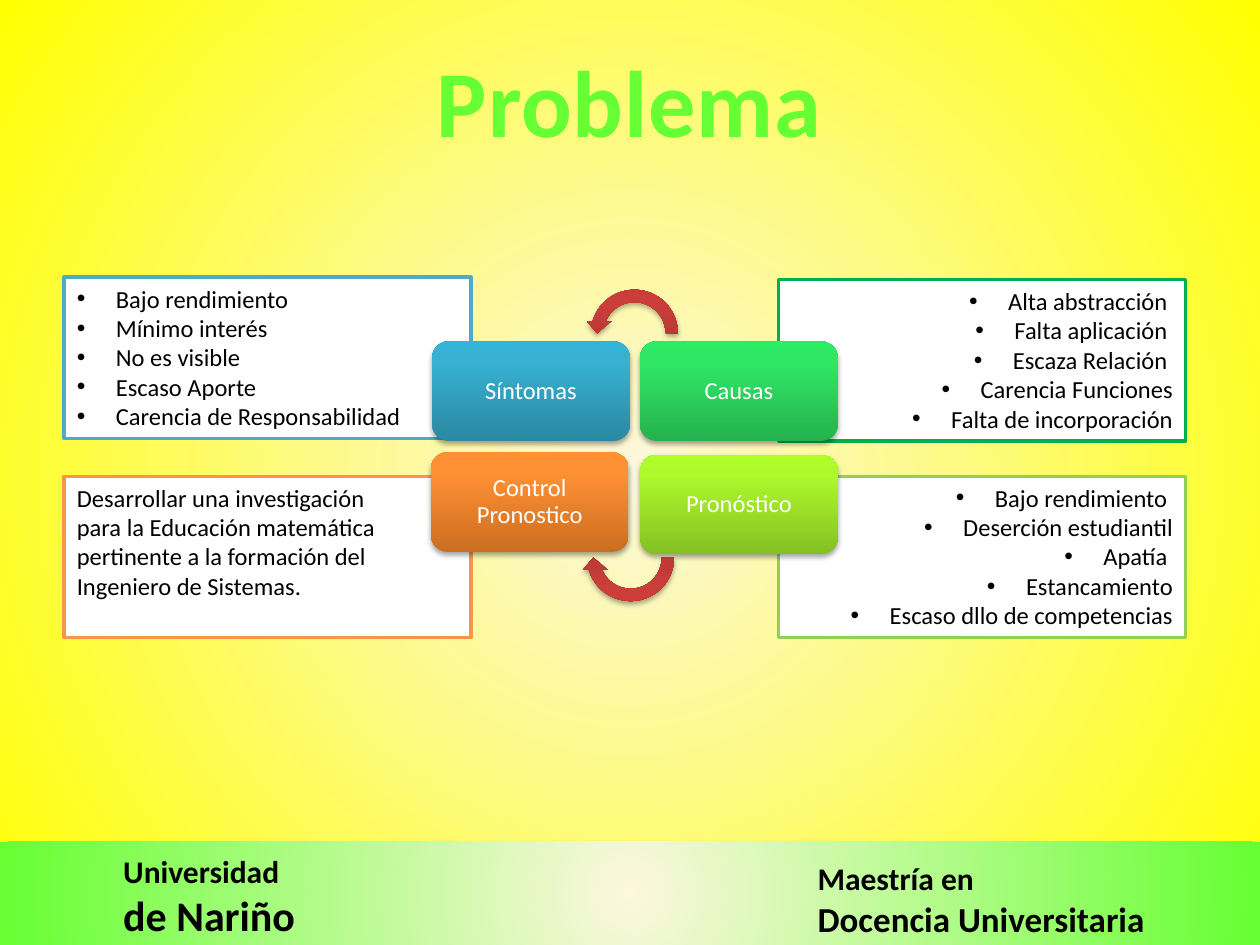
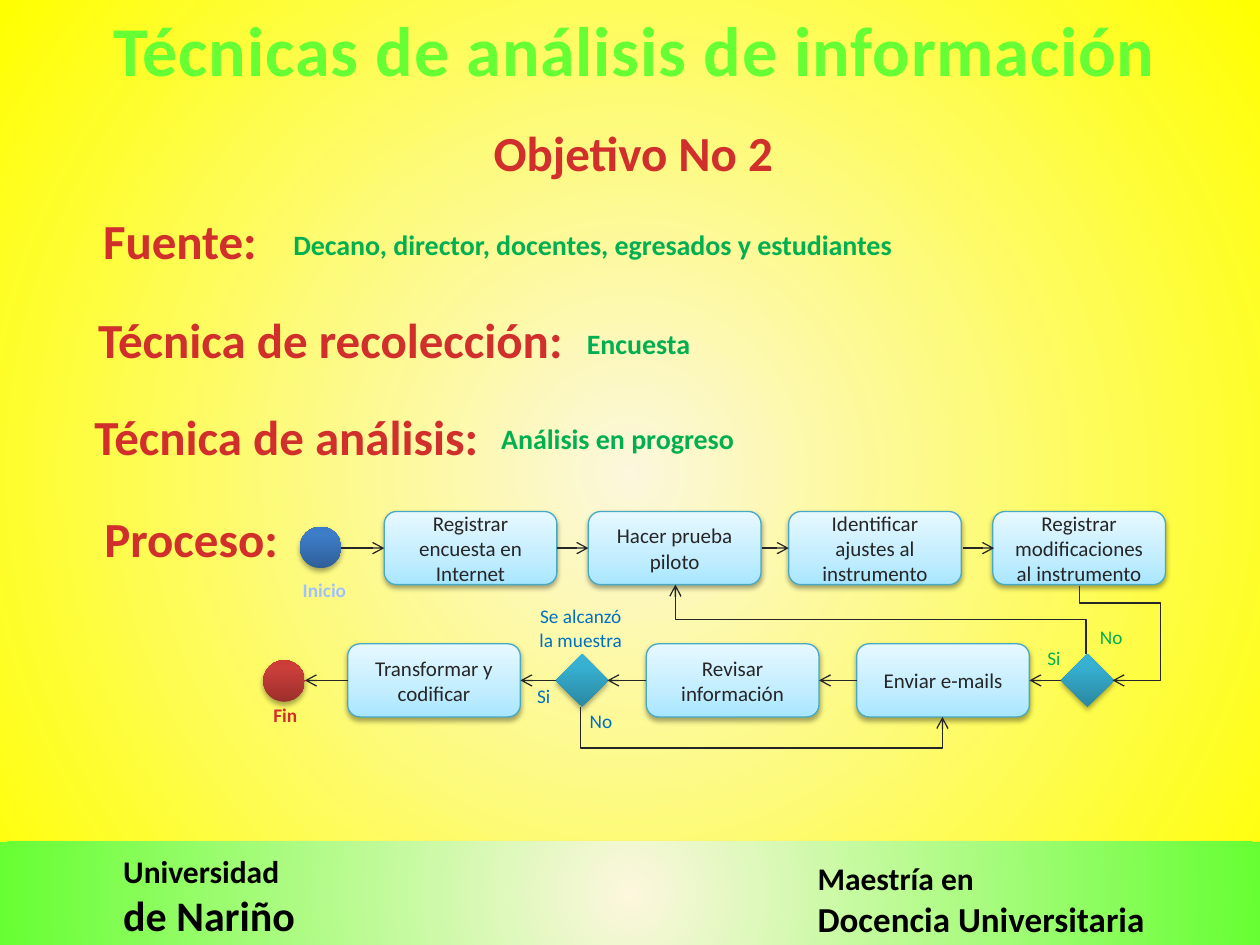
from dataclasses import dataclass
from itertools import cycle
from lxml.etree import SubElement
from pptx import Presentation
from pptx.dml.color import RGBColor
from pptx.enum.shapes import MSO_CONNECTOR, MSO_SHAPE
from pptx.enum.text import MSO_ANCHOR, MSO_AUTO_SIZE, PP_ALIGN
from pptx.oxml import parse_xml
from pptx.oxml.ns import nsdecls, qn
from pptx.util import Inches, Pt


@dataclass(frozen=True)
class Theme:
    font: str = "Calibri"
    black: str = "000000"
    white: str = "FFFFFF"
    ink: str = "262626"
    lime: str = "66FF33"
    green: str = "00B050"
    blue: str = "0070C0"
    edge: str = "46AAC5"
    page: tuple = ((0, "FCF7DD"), (100, "FFFF00"))
    band: tuple = ((0, "FCF7DD"), (100, "66FF33"))
    teal: tuple = ((0, "2A88A2"), (80, "37B1D2"), (100, "34B4D6"))
    leaf: tuple = ((0, "25B24E"), (80, "30E765"), (100, "2DEB64"))
    grass: tuple = ((0, "85C022"), (80, "ADF92C"), (100, "AFFE28"))
    orange: tuple = ((0, "CC6E20"), (80, "FF9034"), (100, "FF9136"))
    red: tuple = ((0, "9C2F2D"), (80, "CB3E3A"), (100, "CE3B37"))
    navy: tuple = ((0, "2F5F99"), (80, "3D7CC7"), (100, "3A7CCB"))
    ice: tuple = ((0, "A7E6FF"), (35, "C1EDFF"), (100, "E7F8FF"))
    ruby: tuple = ((0, "FC7C7A"), (75, "D02F2C"), (100, "C70500"))
    sky: tuple = ((0, "BFD3F9"), (9, "A0C1FF"), (50, "003D85"),
                  (79, "A0C1FF"), (100, "BFD3F9"))
    hero: int = 54
    head: int = 40
    label: int = 28
    value: int = 16
    body: int = 14
    step: int = 12
    tag: int = 11
    foot: tuple = (18, 24)
    course: tuple = (18, 20)


def style(item, values):
    for name, value in values.items():
        setattr(item, name, value)


def blend(root, stops, angle=None):
    marks = "".join(
        f'<a:gs pos="{spot * 1000}"><a:srgbClr val="{tone}"/></a:gs>'
        for spot, tone in stops)
    if angle is None:
        way = ('<a:path path="circle"><a:fillToRect l="50000" t="50000" '
               'r="50000" b="50000"/></a:path>')
    else:
        way = f'<a:lin ang="{angle * 60000}" scaled="0"/>'
    old = root.find(".//" + qn("a:solidFill"))
    old.getparent().replace(old, parse_xml(
        f'<a:gradFill {nsdecls("a")} rotWithShape="1">'
        f'<a:gsLst>{marks}</a:gsLst>{way}</a:gradFill>'))


class Pen:
    COLS, ROWS = 100, 75

    def __init__(self, theme):
        self.theme = theme
        self.deck = Presentation()
        style(self.deck, {"slide_width": Inches(10), "slide_height": Inches(7.5)})
        self.slide = None
        master = self.deck.slide_master
        self.tint(master.background.fill, master.element, theme.page)

    def grid(self, *spots):
        units = (self.deck.slide_width / self.COLS, self.deck.slide_height / self.ROWS)
        return [round(spot * unit) for spot, unit in zip(spots, cycle(units))]

    def tint(self, fill, root, paint, angle=None):
        fill.solid()
        if isinstance(paint, str):
            fill.fore_color.rgb = RGBColor.from_string(paint)
        else:
            blend(root, paint, angle)

    def place(self, shape, at):
        style(shape, dict(zip(("left", "top", "width", "height"), self.grid(*at))))

    def page(self, layout, title, size, at):
        self.slide = self.deck.slides.add_slide(self.deck.slide_layouts[layout])
        self.band()
        head = self.slide.shapes.title
        self.place(head, at)
        self.words(head.text_frame, [title], size, self.theme.lime, bold=True, wrap=False)
        for run in head.text_frame.paragraphs[0].runs:
            run._r.get_or_add_rPr().set("spc", "50")

    def band(self):
        look = self.theme
        self.shape("RECTANGLE", (0, 66.8, 100, 8.2), look.band, angle=None)
        self.text((8.8, 67.1, 18, 8.1), ["Universidad", "de Nariño"],
                  look.foot, look.black, bold=True, align="LEFT")
        self.text((63.9, 67.7, 29.1, 7.4), ["Maestría en", "Docencia Universitaria"],
                  look.course, look.black, bold=True, align="LEFT")

    def words(self, frame, lines, size, paint, bold=False, align="CENTER",
              wrap=True, anchor="TOP", spacing=1.0):
        style(frame, {"word_wrap": wrap, "auto_size": MSO_AUTO_SIZE.NONE,
                      "vertical_anchor": getattr(MSO_ANCHOR, anchor)})
        sizes = size if isinstance(size, tuple) else (size,)
        for index, (line, points) in enumerate(zip(lines, cycle(sizes))):
            para = frame.add_paragraph() if index else frame.paragraphs[0]
            style(para, {"alignment": getattr(PP_ALIGN, align), "space_before": Pt(0),
                         "line_spacing": spacing})
            run = para.add_run()
            run.text = line
            style(run.font, {"name": self.theme.font, "size": Pt(points), "bold": bold})
            self.tint(run.font.fill, run._r, paint, 90)

    def text(self, at, lines, size, paint, **form):
        box = self.slide.shapes.add_textbox(*self.grid(*at))
        self.words(box.text_frame, lines, size, paint, **form)

    def label(self, at, line, size, paint):
        self.text(at, [line], size, paint, bold=True, align="LEFT")

    def tag(self, at, lines, paint, bold=False):
        self.text(at, lines, self.theme.tag, paint, bold=bold, wrap=False)

    def note(self, holder, at, lines, edge, align="LEFT", mark=True):
        self.place(holder, at)
        self.tint(holder.fill, holder.element, self.theme.white)
        holder.line.color.rgb = RGBColor.from_string(edge)
        holder.line.width = Pt(2)
        self.words(holder.text_frame, lines, self.theme.body, self.theme.black, align=align)
        indent = Inches(0.31) if mark else 0
        for para in holder.text_frame.paragraphs:
            props = para._p.get_or_add_pPr()
            props.set("marL", str(indent))
            props.set("indent", str(-indent))
            if mark:
                SubElement(props, qn("a:buFont")).set("typeface", "Arial")
                SubElement(props, qn("a:buChar")).set("char", "•")
            else:
                SubElement(props, qn("a:buNone"))

    def shape(self, kind, at, paint, angle=270, edge=None):
        item = self.slide.shapes.add_shape(getattr(MSO_SHAPE, kind), *self.grid(*at))
        self.tint(item.fill, item.element, paint, angle)
        if edge:
            item.line.color.rgb = RGBColor.from_string(edge)
            item.line.width = Pt(0.75)
        else:
            item.line.fill.background()
        item.shadow.inherit = False
        item.element.spPr.find(qn("a:effectLst")).append(parse_xml(
            f'<a:outerShdw {nsdecls("a")} blurRad="{Pt(3.1)}" dist="{Pt(1.8)}" '
            'dir="5400000" rotWithShape="0"><a:srgbClr val="000000">'
            '<a:alpha val="35000"/></a:srgbClr></a:outerShdw>'))
        return item

    def node(self, at, line, paint):
        item = self.shape("ROUNDED_RECTANGLE", (*at, 15.7, 7.9), paint)
        sides = ("left", "top", "right", "bottom")
        style(item.text_frame, {f"margin_{side}": Inches(0.06) for side in sides})
        self.words(item.text_frame, [line], self.theme.body, self.theme.white,
                   anchor="MIDDLE", spacing=0.9)

    def step(self, at, *lines):
        item = self.shape("ROUNDED_RECTANGLE", (*at, 13.7, 5.8), self.theme.ice,
                          edge=self.theme.edge)
        self.words(item.text_frame, lines, self.theme.step, self.theme.ink, anchor="MIDDLE")

    def arrow(self, start, end, kind="STRAIGHT"):
        link = self.slide.shapes.add_connector(
            getattr(MSO_CONNECTOR, kind), *self.grid(*start, *end))
        link.line.color.rgb = RGBColor.from_string(self.theme.ink)
        link.line.width = Pt(0.75)
        props = link.element.spPr
        SubElement(props.find(qn("a:ln")), qn("a:tailEnd")).set("type", "arrow")
        SubElement(props, qn("a:effectLst"))
        return link

    def elbow(self, start, end, *bends):
        link = self.arrow(start, end, "ELBOW")
        wide, high = abs(end[1] - start[1]), abs(end[0] - start[0])
        mid = [(a + b) / 2 for a, b in zip(start, end)]
        self.place(link, (mid[0] - wide / 2, mid[1] - high / 2, wide, high))
        frame = link.element.spPr.find(qn("a:xfrm"))
        for name in ("flipH", "flipV"):
            frame.attrib.pop(name, None)
        frame.set("rot", str(270 * 60000))
        frame.set("flipH" if start[0] < end[0] else "flipV", "1")
        geom = link.element.spPr.find(qn("a:prstGeom"))
        geom.set("prst", f"bentConnector{len(bends) + 2}")
        guides = geom.find(qn("a:avLst"))
        for index, bend in enumerate(bends, 1):
            guide = SubElement(guides, qn("a:gd"))
            guide.set("name", f"adj{index}")
            guide.set("fmla", f"val {round(bend * 100000)}")


def problem(pen):
    look = pen.theme
    pen.page(4, "Problema", look.hero, (33.5, 2.9, 32.9, 10.1))
    notes = [
        ((5.1, 37.8), look.orange, "F79646", "LEFT", False,
         ["Desarrollar una investigación",
          "para la Educación matemática pertinente a la formación del "
          "Ingeniero de Sistemas."]),
        ((61.8, 37.8), look.grass, "92D050", "RIGHT", True,
         ["Bajo rendimiento ", "Deserción estudiantil", "Apatía ", "Estancamiento",
          "Escaso dllo de competencias"]),
        ((5.1, 22), look.teal, "4BACC6", "LEFT", True,
         ["Bajo rendimiento", "Mínimo interés", "No es visible", "Escaso Aporte",
          "Carencia de Responsabilidad"]),
        ((61.8, 22.2), look.leaf, look.green, "RIGHT", True,
         ["Alta abstracción ", "Falta aplicación ", "Escaza Relación ",
          "Carencia Funciones", "Falta de incorporación"]),
    ]
    nodes = [((34.2, 35.9), "Control Pronostico"), ((50.8, 36.1), "Pronóstico"),
             ((34.3, 27.1), "Síntomas"), ((50.8, 27.1), "Causas")]
    holders = list(pen.slide.placeholders)[1:]
    for holder, (spot, paint, edge, align, mark, lines), (at, name) in zip(
            holders, notes, nodes):
        pen.note(holder, (*spot, 32.3, 12.8), lines, edge, align, mark)
        pen.node(at, name, paint)
    top = pen.shape("CIRCULAR_ARROW", (46.4, 22.5, 7.9, 7.9), look.red)
    top.element.spPr.find(qn("a:xfrm")).set("flipH", "1")
    low = pen.shape("CIRCULAR_ARROW", (46.1, 40.3, 7.9, 7.9), look.red)
    low.rotation = 180


def methods(pen):
    look = pen.theme
    pen.page(5, "Técnicas de análisis de información ", look.head, (7.5, 0, 87.1, 7.7))
    pen.text((38, 9.2, 24.5, 5.7), ["Objetivo No 2"], look.label, look.ruby,
             bold=True, wrap=False)
    for left, top, wide, line in (
            (7.2, 16.2, 16, "Fuente:"), (6.8, 24.1, 41.1, "Técnica de recolección:"),
            (6.5, 31.8, 35.5, "Técnica de análisis:"), (7.3, 39.9, 17, "Proceso:")):
        pen.label((left, top, wide, 5.7), line, look.label, look.ruby)
    for left, top, line in (
            (22.3, 17.6, "Decano, director, docentes, egresados y estudiantes"),
            (45.6, 25.4, "Encuesta"), (38.8, 33, "Análisis en progreso")):
        pen.label((left, top, 52, 3.7), line, look.value, look.green)

    for left, lines in ((30.5, ["Registrar encuesta en Internet"]),
                        (46.7, ["Hacer prueba", "piloto"]),
                        (62.6, ["Identificar ajustes al", "instrumento"]),
                        (78.8, ["Registrar modificaciones al instrumento"])):
        pen.step((left, 40.6), *lines)
    for left, line in ((27.6, "Transformar y codificar"), (51.3, "Revisar información"),
                       (68, "Enviar e-mails")):
        pen.step((left, 51.1), line)
    for left in (44.1, 84.2):
        pen.shape("DIAMOND", (left, 51.9, 4.2, 4.2), look.teal)
    pen.shape("OVAL", (23.8, 41.8, 3.3, 3.3), look.navy)
    pen.shape("OVAL", (20.9, 52.4, 3.3, 3.3), look.red)

    for start, end in ((27.1, 30.5), (44.2, 46.7), (60.5, 62.6), (76.4, 78.9)):
        pen.arrow((start, 43.5), (end, 43.5))
    for start, end in ((84.2, 81.7), (68, 65), (51.3, 48.2), (44.1, 41.3), (27.6, 24.2)):
        pen.arrow((start, 54), (end, 54))
    pen.elbow((46.1, 56.1), (74.8, 56.9), 4.08)
    pen.elbow((85.7, 46.5), (88.3, 54), 0.18, 2.47)
    pen.elbow((86.2, 51.9), (53.6, 46.4), 0.5)

    pen.tag((41.8, 47.5, 8.6, 4.7), ["Se alcanzó", "la muestra"], look.blue)
    for left, top, wide, line, paint, bold in (
            (86.3, 49.1, 3.8, "No", look.green, False),
            (82.1, 50.8, 3.1, "Si", look.green, False),
            (41.6, 53.8, 3.1, "Si", look.blue, False),
            (45.8, 55.8, 3.8, "No", look.blue, False),
            (23, 45.4, 5.5, "Inicio", look.sky, True),
            (20.7, 55.3, 3.9, "Fin", look.ruby, True)):
        pen.tag((left, top, wide, 2.9), [line], paint, bold)


def main():
    pen = Pen(Theme())
    problem(pen)
    methods(pen)
    pen.deck.save("out.pptx")


if __name__ == "__main__":
    main()
